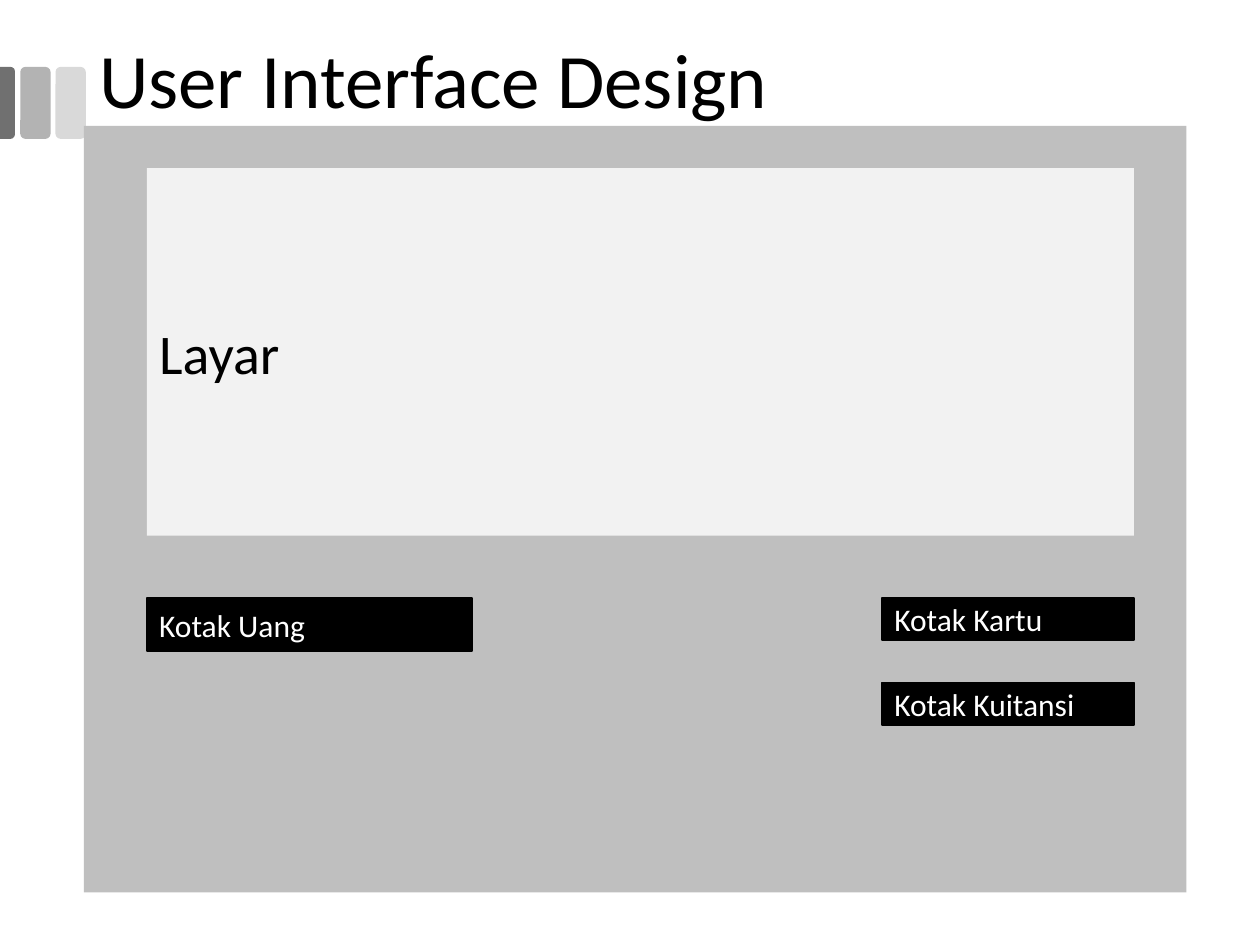
from pptx import Presentation
from pptx.dml.color import RGBColor
from pptx.enum.shapes import MSO_SHAPE as Kind
from pptx.enum.text import MSO_ANCHOR as Anchor, PP_ALIGN as Align
from pptx.util import Cm, Pt

INK = {"black": "000000", "white": "FFFFFF", "panel": "BFBFBF", "screen": "F2F2F2",
       "dark": "707070", "mid": "B3B3B3", "light": "D9D9D9"}
FONT = "Calibri"
TITLE = "User Interface Design"

# Lengths in cm: left, top, width, height
PANEL = (1.69, 2.54, 22.23, 15.45)
SCREEN = ("Layar", (2.96, 3.39, 19.9, 7.41))
SLOTS = [
    ("Kotak Uang", (2.96, 12.06, 6.56, 1.07)),
    ("Kotak Kartu", (17.78, 12.06, 5.08, 0.85)),
    ("Kotak Kuitansi", (17.78, 13.76, 5.08, 0.85)),
]
TABS = ["light", "mid"]
TAB_X, TAB_Y, TAB_W, TAB_H, TAB_STEP = 1.12, 1.35, 0.61, 1.45, 0.71
EDGE_W = 0.3


def rgb(name):
    return RGBColor.from_string(INK[name])


def write(shape, text, size, color):
    frame = shape.text_frame
    frame.word_wrap = True
    frame.vertical_anchor = Anchor.MIDDLE
    para = frame.paragraphs[0]
    para.text = text
    para.alignment = Align.LEFT
    para.font.name = FONT
    para.font.size = Pt(size)
    para.font.color.rgb = rgb(color)
    return para


def block(slide, box, fill, kind=Kind.RECTANGLE, line=None):
    shape = slide.shapes.add_shape(kind, *map(Cm, box))
    shape.shadow.inherit = False
    shape.fill.solid()
    shape.fill.fore_color.rgb = rgb(fill)
    if line:
        shape.line.color.rgb = rgb(line)
        shape.line.width = Pt(1)
    else:
        shape.line.fill.background()
    return shape


def add_tabs(slide):
    """Row of grey tabs running off the left edge, the last one cut flat."""
    for i, fill in enumerate(TABS):
        box = (TAB_X - i * TAB_STEP, TAB_Y, TAB_W, TAB_H)
        block(slide, box, fill, Kind.ROUNDED_RECTANGLE)
    # Turned a quarter, so its width runs down the slide
    box = ((EDGE_W - TAB_H) / 2, TAB_Y + (TAB_H - EDGE_W) / 2, TAB_H, EDGE_W)
    edge = block(slide, box, "dark", Kind.ROUND_2_SAME_RECTANGLE)
    edge.adjustments[0] = 0.29
    edge.rotation = 90


def main():
    deck = Presentation()
    deck.slide_width, deck.slide_height = Cm(25.4), Cm(19.05)
    slide = deck.slides.add_slide(deck.slide_layouts[6])

    add_tabs(slide)
    title = slide.shapes.add_textbox(Cm(1.75), Cm(0.43), Cm(21.89), Cm(2.51))
    write(title, TITLE, 44, "black").line_spacing = 0.9

    block(slide, PANEL, "panel")
    text, box = SCREEN
    write(block(slide, box, "screen"), text, 32, "black")
    for text, box in SLOTS:
        write(block(slide, box, "black", line="black"), text, 18, "white")

    deck.save("out.pptx")


if __name__ == "__main__":
    main()
